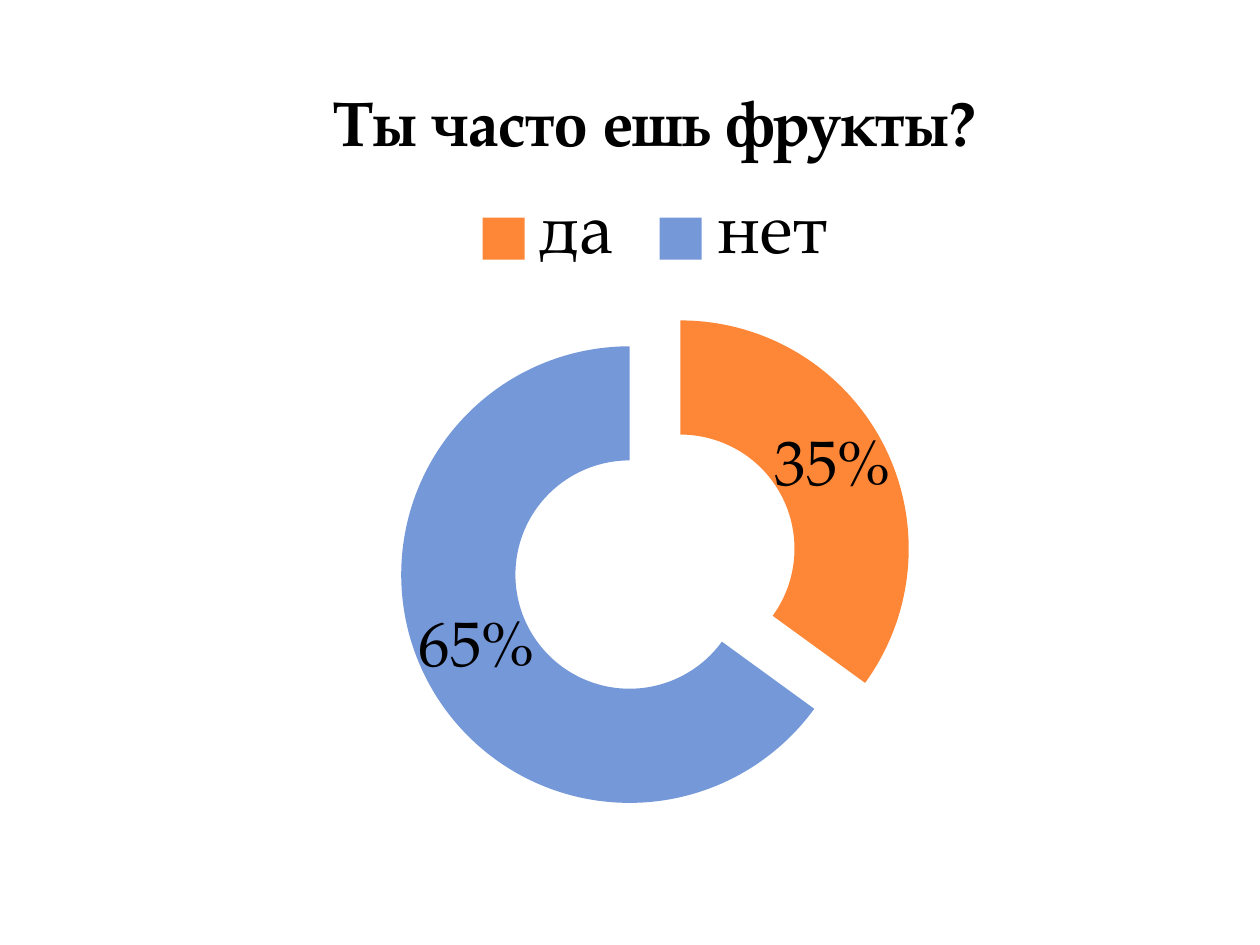
from lxml.etree import Element
from pptx import Presentation
from pptx.chart.data import CategoryChartData
from pptx.dml.color import RGBColor
from pptx.enum.chart import XL_CHART_TYPE as ChartType, XL_LEGEND_POSITION as LegendPosition
from pptx.oxml.ns import qn
from pptx.util import Emu, Pt

PX = 914400 // 126
FONT = "TeX Gyre Pagella"
COLORS = {"text": "000000", "yes": "FE8637", "no": "7598D9"}


def px(length):
    return Emu(length * PX)


def style_font(font, size, bold=False):
    font.name = FONT
    font.size = Pt(size)
    font.bold = bold
    font.color.rgb = RGBColor.from_string(COLORS["text"])


def add_doughnut(slide, box, answers):
    data = CategoryChartData(number_format="0")
    data.categories = [name for name, _, _ in answers]
    data.add_series("Series 1", [value for _, value, _ in answers])
    frame = slide.shapes.add_chart(ChartType.DOUGHNUT, *map(px, box), data)
    chart = frame.chart
    style_font(chart.font, 18)
    return chart


def color_slices(series, answers):
    for index, (_, _, color) in enumerate(answers):
        fill = series.points[index].format.fill
        fill.solid()
        fill.fore_color.rgb = RGBColor.from_string(COLORS[color])


def explode_slices(series, percent):
    explosion = Element(qn("c:explosion"), val=str(percent))
    series._element.find(qn("c:dPt")).addprevious(explosion)


def add_title(chart, text):
    chart.has_title = True
    frame = chart.chart_title.text_frame
    frame.text = text
    style_font(frame.paragraphs[0].runs[0].font, 36, bold=True)
    chart.chart_title.include_in_layout = False


def add_legend(chart):
    chart.has_legend = True
    chart.legend.position = LegendPosition.TOP
    chart.legend.include_in_layout = False
    style_font(chart.legend.font, 40)


def add_percent_labels(plot):
    plot.vary_by_categories = True
    plot.has_data_labels = True
    labels = plot.data_labels
    labels.show_value = False
    labels.show_percentage = True
    labels.number_format = "0%"
    labels.number_format_is_linked = False
    style_font(labels.font, 36)


def main():
    deck = Presentation()
    deck.slide_width, deck.slide_height = px(1260), px(945)
    slide = deck.slides.add_slide(deck.slide_layouts[6])
    answers = [("да", 35, "yes"), ("нет", 65, "no")]
    chart = add_doughnut(slide, (118, 59, 1074, 777), answers)
    add_title(chart, "Ты часто ешь фрукты?")
    add_legend(chart)
    plot = chart.plots[0]
    add_percent_labels(plot)
    color_slices(plot.series[0], answers)
    explode_slices(plot.series[0], 25)
    deck.save("out.pptx")


if __name__ == "__main__":
    main()
